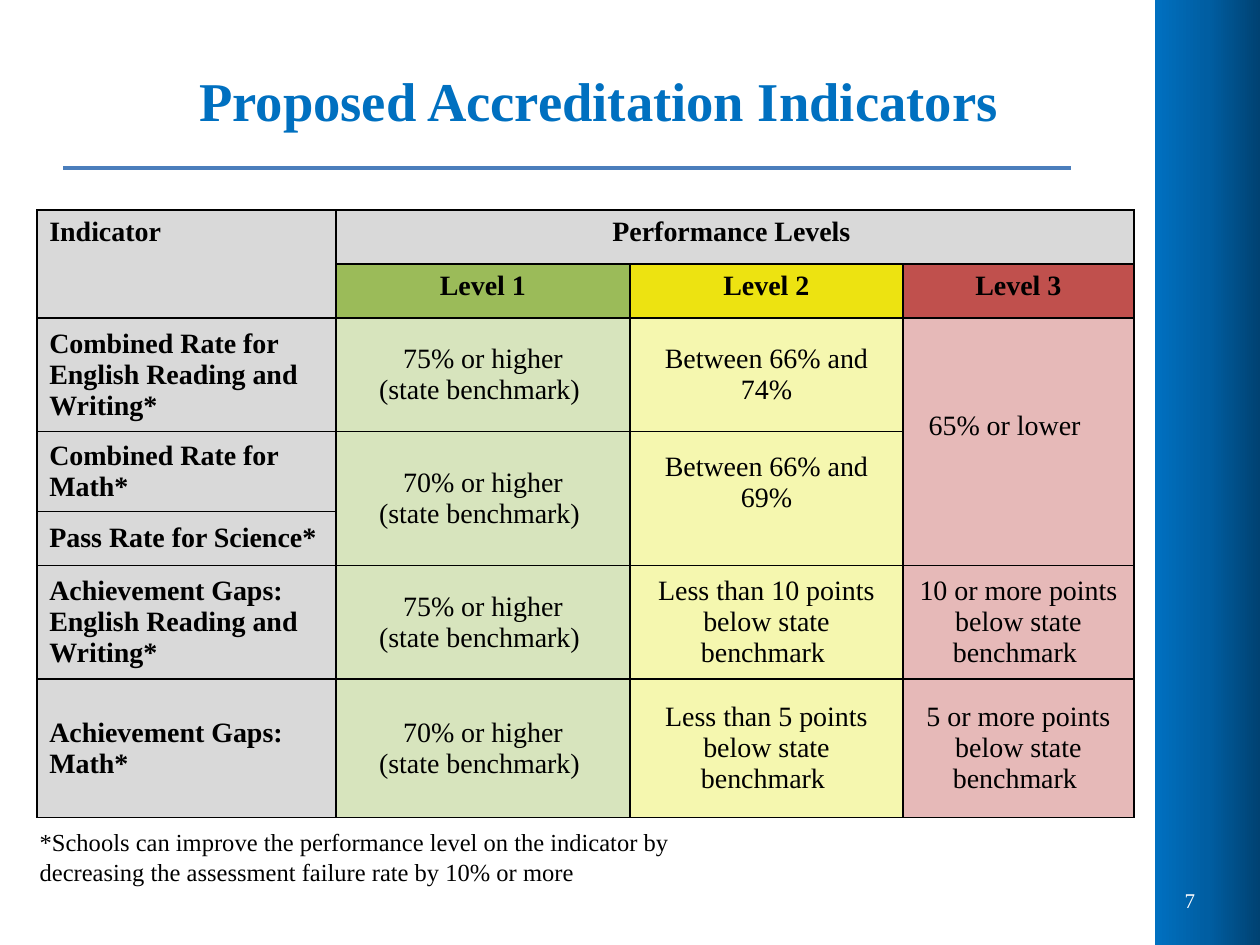
from copy import deepcopy

from lxml.etree import SubElement
from pptx import Presentation
from pptx.dml.color import RGBColor
from pptx.enum.shapes import MSO_CONNECTOR, MSO_SHAPE
from pptx.enum.text import MSO_ANCHOR, PP_ALIGN
from pptx.oxml import parse_xml
from pptx.oxml.ns import nsdecls, qn
from pptx.util import Inches, Pt

GRID_COLS, GRID_ROWS = 120, 90
CELL = Inches(10) / GRID_COLS
FONT = "Times New Roman"
GREY, GREEN, YELLOW, RED = "D9D9D9", "D7E4BD", "F5F7AF", "E6B9B8"
BODY_FILLS = [GREY, GREEN, YELLOW, RED]
HEADER_FILLS = [[GREY] * 4, [GREY, "9BBB59", "EDE311", "C0504D"]]
COL_UNITS = [28.5, 28, 26, 22]
ROW_UNITS = [5.15, 5.15, 10.8, 7.6, 5.15, 10.05, 13.2]
BENCHMARK = "(state benchmark) "
ROWS = [
    ["Indicator", "Performance Levels ", None, None],
    [None, "Level 1", "Level 2", "Level 3"],
    ["Combined Rate for English Reading and Writing*",
     f"75% or higher\n{BENCHMARK}", "Between 66% and 74%", "65% or lower"],
    ["Combined Rate for Math*",
     f"70% or higher\n{BENCHMARK}", "Between 66% and 69%", None],
    ["Pass Rate for Science*", None, None, None],
    ["Achievement Gaps: English Reading and Writing*",
     f"75% or higher\n{BENCHMARK}",
     "Less than 10 points below state benchmark ",
     "10 or more points below state benchmark "],
    ["Achievement Gaps: Math*",
     f"70% or higher\n{BENCHMARK}",
     "Less than 5 points below state benchmark ",
     "5 or more points below state benchmark "],
]
MERGES = [(0, 0, 1, 0), (0, 1, 0, 3), (2, 3, 4, 3), (3, 1, 4, 1), (3, 2, 4, 2)]
MARGINS = {
    (2, 3): {"margin_right": Inches(0.32), "margin_bottom": Inches(0.3)},
    (3, 2): {"margin_bottom": Inches(0.3)},
}


def rgb(value):
    """Turn a hex string into a colour."""
    return RGBColor.from_string(value)


def units(*values):
    """Turn grid units into slide lengths."""
    return [round(v * CELL) for v in values]


def apply(target, formats):
    """Set every attribute named in a dict of format values."""
    for name, value in formats.items():
        setattr(target, name, value)


def write(tf, text, size, color="000000", bold=False, align=PP_ALIGN.LEFT):
    """Write each line of text as one formatted paragraph."""
    for i, line in enumerate(text.split("\n")):
        p = tf.add_paragraph() if i else tf.paragraphs[0]
        p.alignment = align
        r = p.add_run()
        r.text = line
        apply(r.font, {"name": FONT, "size": Pt(size), "bold": bold})
        r.font.color.rgb = rgb(color)


def add_text(s, box, text, size, anchor=MSO_ANCHOR.MIDDLE, **style):
    """Add a wrapping text box."""
    tf = s.shapes.add_textbox(*units(*box)).text_frame
    apply(tf, {"word_wrap": True, "vertical_anchor": anchor})
    write(tf, text, size, **style)


def add_sidebar(s, box, colors):
    """Add a panel shaded from left to right."""
    sp = s.shapes.add_shape(MSO_SHAPE.RECTANGLE, *units(*box))
    sp.shadow.inherit = False
    sp.line.fill.background()
    sp.fill.gradient()
    sp.fill.gradient_angle = 0
    stop_list = sp.fill._fill._gradFill.find(qn("a:gsLst"))
    stop_list.append(deepcopy(stop_list[-1]))
    for i, (stop, color) in enumerate(zip(sp.fill.gradient_stops, colors)):
        stop.position = i / (len(colors) - 1)
        stop.color.rgb = rgb(color)


def add_rule(s, ends, color, width):
    """Add a straight line without shadow."""
    rule = s.shapes.add_connector(MSO_CONNECTOR.STRAIGHT, *units(*ends))
    rule.line.color.rgb = rgb(color)
    rule.line.width = Pt(width)
    SubElement(rule._element.spPr, qn("a:effectLst"))


def style_cell(cell, fill):
    """Give a cell black one-point borders and a solid fill."""
    pr = cell._tc.get_or_add_tcPr()
    for side in ("lnL", "lnR", "lnT", "lnB"):
        pr.append(parse_xml(
            f'<a:{side} {nsdecls("a")} w="{Pt(1)}"><a:solidFill>'
            f'<a:srgbClr val="000000"/></a:solidFill></a:{side}>'))
    cell.fill.solid()
    cell.fill.fore_color.rgb = rgb(fill)


def add_indicator_table(s, left, top):
    """Add the table of indicators and performance levels."""
    box = units(left, top, sum(COL_UNITS), sum(ROW_UNITS))
    table = s.shapes.add_table(len(ROWS), len(COL_UNITS), *box).table
    apply(table, {"first_row": False, "horz_banding": False})
    for col, width in zip(table.columns, units(*COL_UNITS)):
        col.width = width
    for row, height in zip(table.rows, units(*ROW_UNITS)):
        row.height = height
    for r1, c1, r2, c2 in MERGES:
        table.cell(r1, c1).merge(table.cell(r2, c2))
    for i, texts in enumerate(ROWS):
        header = i < len(HEADER_FILLS)
        fills = HEADER_FILLS[i] if header else BODY_FILLS
        for j, (text, fill) in enumerate(zip(texts, fills)):
            cell = table.cell(i, j)
            style_cell(cell, fill)
            if text is None:
                continue
            anchor = MSO_ANCHOR.TOP if header else MSO_ANCHOR.MIDDLE
            apply(cell, {"vertical_anchor": anchor, **MARGINS.get((i, j), {})})
            write(cell.text_frame, text, 16, bold=header or j == 0,
                  align=PP_ALIGN.CENTER if j else PP_ALIGN.LEFT)


def main():
    """Build the slide and save it."""
    prs = Presentation()
    apply(prs, {"slide_width": Inches(10), "slide_height": Inches(7.5)})
    s = prs.slides.add_slide(prs.slide_layouts[6])
    add_sidebar(s, (110, 0, 10, GRID_ROWS), ["0070C0", "005EA2", "004272"])
    add_text(s, (7, 3, 100, 13), "Proposed Accreditation Indicators", 31.2,
             color="0070C0", bold=True, align=PP_ALIGN.CENTER)
    add_indicator_table(s, 3.5, 20)
    add_text(s, (2.6, 78.2, 63, 6.8),
             "*Schools can improve the performance level on the indicator by "
             "decreasing the assessment failure rate by 10% or more", 14,
             anchor=MSO_ANCHOR.TOP)
    add_rule(s, (6, 16, 102, 16), "4B7EBC", 2)
    add_text(s, (110, 83.4, 5, 4.6), "7", 12, color="FFFFFF",
             align=PP_ALIGN.RIGHT)
    prs.save("out.pptx")


if __name__ == "__main__":
    main()
